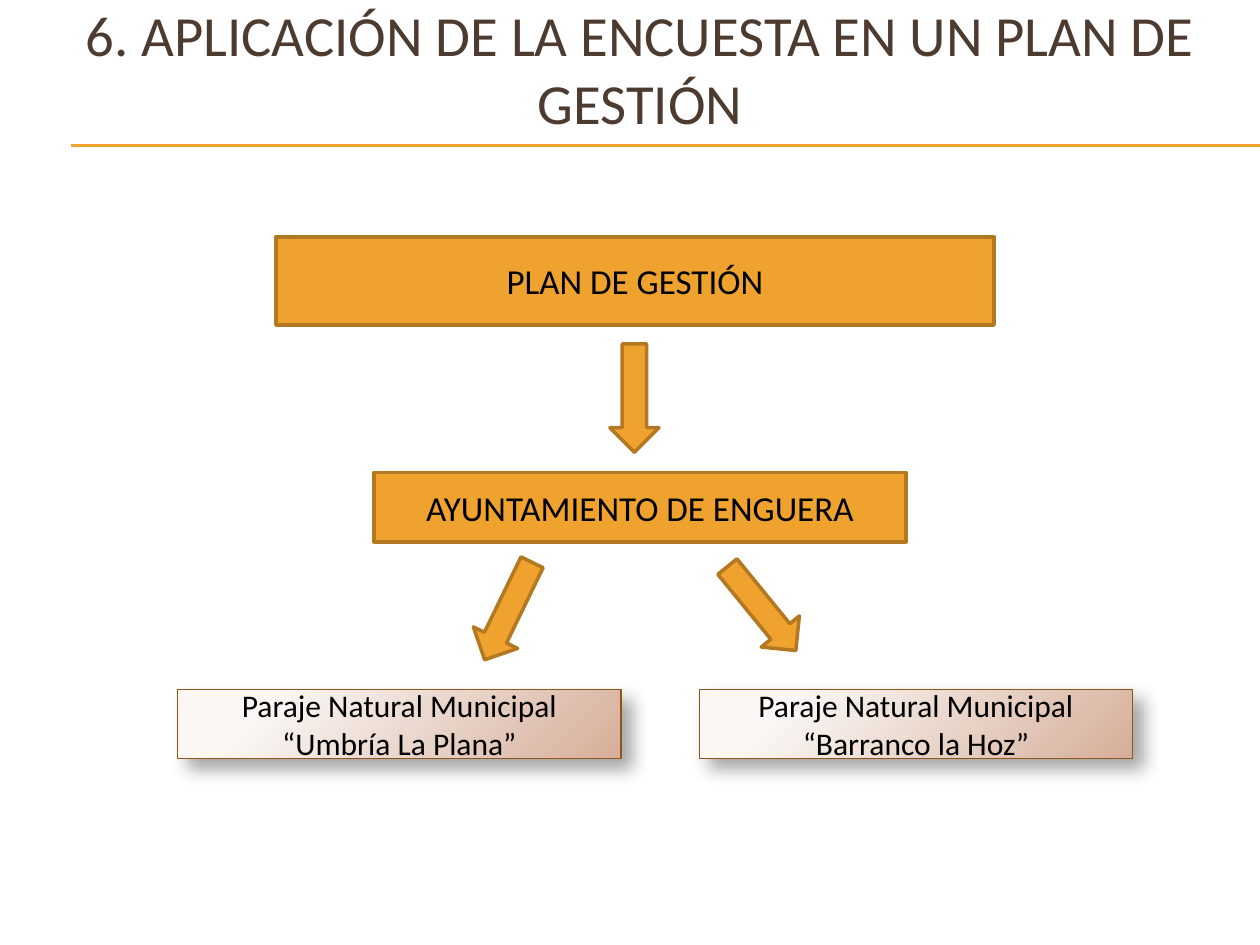
from lxml import etree
from pptx import Presentation
from pptx.dml.color import RGBColor
from pptx.enum.shapes import MSO_CONNECTOR, MSO_SHAPE
from pptx.enum.text import MSO_ANCHOR, MSO_AUTO_SIZE, PP_ALIGN
from pptx.oxml import parse_xml
from pptx.oxml.ns import nsdecls, qn
from pptx.util import Pt

PX = 9144  # 100 px to the inch
FONT = "Calibri"
BROWN = RGBColor(0x4E, 0x3B, 0x30)
BLACK = RGBColor(0, 0, 0)
AMBER = RGBColor(0xF0, 0xA2, 0x2E)
AMBER_EDGE = RGBColor(0xB2, 0x78, 0x22)
SITE_LIGHT = RGBColor(0xFA, 0xF7, 0xF5)
SITE_DARK = RGBColor(0xD6, 0xAE, 0x99)
SITE_EDGE = RGBColor(0x92, 0x55, 0x18)
RECTANGLE, DOWN_ARROW = MSO_SHAPE.RECTANGLE, MSO_SHAPE.DOWN_ARROW
STRAIGHT = MSO_CONNECTOR.STRAIGHT
MIDDLE, CENTER = MSO_ANCHOR.MIDDLE, PP_ALIGN.CENTER
NO_AUTOFIT = MSO_AUTO_SIZE.NONE

SHADOW_XML = (
    f'<a:outerShdw {nsdecls("a")} blurRad="130000" dist="101600" dir="2700000" '
    'algn="tl" rotWithShape="0"><a:srgbClr val="000000"><a:alpha val="35000"/>'
    '</a:srgbClr></a:outerShdw>')
CIRCLE_XML = (
    f'<a:path {nsdecls("a")} path="circle"><a:fillToRect l="-15000" t="-15000" '
    'r="115000" b="115000"/></a:path>')


def emu(*lengths):
    return [length * PX for length in lengths]


def write(shape, text, size, color):
    frame = shape.text_frame
    frame.word_wrap = True
    frame.auto_size = NO_AUTOFIT
    frame.vertical_anchor = MIDDLE
    frame.text = text
    para = frame.paragraphs[0]
    para.alignment = CENTER
    font = para.runs[0].font
    font.name, font.size, font.color.rgb = FONT, Pt(size), color


def add_outlined(page, kind, box, edge, weight):
    shape = page.shapes.add_shape(kind, *emu(*box))
    shape.shadow.inherit = False
    shape.line.color.rgb = edge
    shape.line.width = Pt(weight)
    return shape


def add_amber(page, kind, box):
    shape = add_outlined(page, kind, box, AMBER_EDGE, 2)
    shape.fill.solid()
    shape.fill.fore_color.rgb = AMBER
    return shape


def add_step(page, box, text):
    write(add_amber(page, RECTANGLE, box), text, 20, BLACK)


def add_arrow(page, left, top, rotation=0):
    add_amber(page, DOWN_ARROW, (left, top, 39, 86)).rotation = rotation


def add_site(page, box, text):
    """Box with a circular gradient and a soft shadow."""
    shape = add_outlined(page, RECTANGLE, box, SITE_EDGE, 0.75)
    shape.fill.gradient()
    stops = zip(shape.fill.gradient_stops, (0.2, 1), (SITE_LIGHT, SITE_DARK))
    for stop, position, color in stops:
        stop.position = position
        stop.color.rgb = color
    properties = shape._element.spPr
    gradient = properties.find(qn("a:gradFill"))
    gradient.replace(gradient.find(qn("a:lin")), parse_xml(CIRCLE_XML))
    properties.find(qn("a:effectLst")).append(parse_xml(SHADOW_XML))
    write(shape, text, 18, BLACK)


def add_heading(page, box, text):
    left, top, width, height = box
    # Double rule under the title
    for offset in (107, 108):
        rule = page.shapes.add_connector(
            STRAIGHT, *emu(left + 23, top + offset, 1000, top + offset))
        rule.line.color.rgb = AMBER
        rule.line.width = Pt(0.75)
        etree.SubElement(rule._element.spPr, qn("a:effectLst"))
    title = page.shapes.title
    title.left, title.top, title.width, title.height = emu(*box)
    write(title, text, 32.4, BROWN)


def add_diagram(page, left, top):
    # Plan and town council
    add_step(page, (left + 78, top, 570, 70), "PLAN DE GESTIÓN")
    add_arrow(page, left + 343, top + 85)
    add_step(page, (left + 156, top + 187, 422, 55), "AYUNTAMIENTO DE ENGUERA")
    # Branches to the two sites
    add_arrow(page, left + 444, top + 252, 320.8)
    add_arrow(page, left + 243, top + 254, 25.9)
    for offset, width, name in ((0, 352, "Umbría La Plana"),
                                (414, 344, "Barranco la Hoz")):
        add_site(page, (left + offset, top + 359, width, 55),
                 f"Paraje Natural Municipal “{name}”")


def main():
    deck = Presentation()
    deck.slide_width, deck.slide_height = emu(1000, 750)
    page = deck.slides.add_slide(deck.slide_layouts[5])
    add_heading(page, (33, 8, 950, 92),
                "6. APLICACIÓN DE LA ENCUESTA EN UN PLAN DE GESTIÓN")
    add_diagram(page, 141, 188)
    deck.save("out.pptx")


if __name__ == "__main__":
    main()
